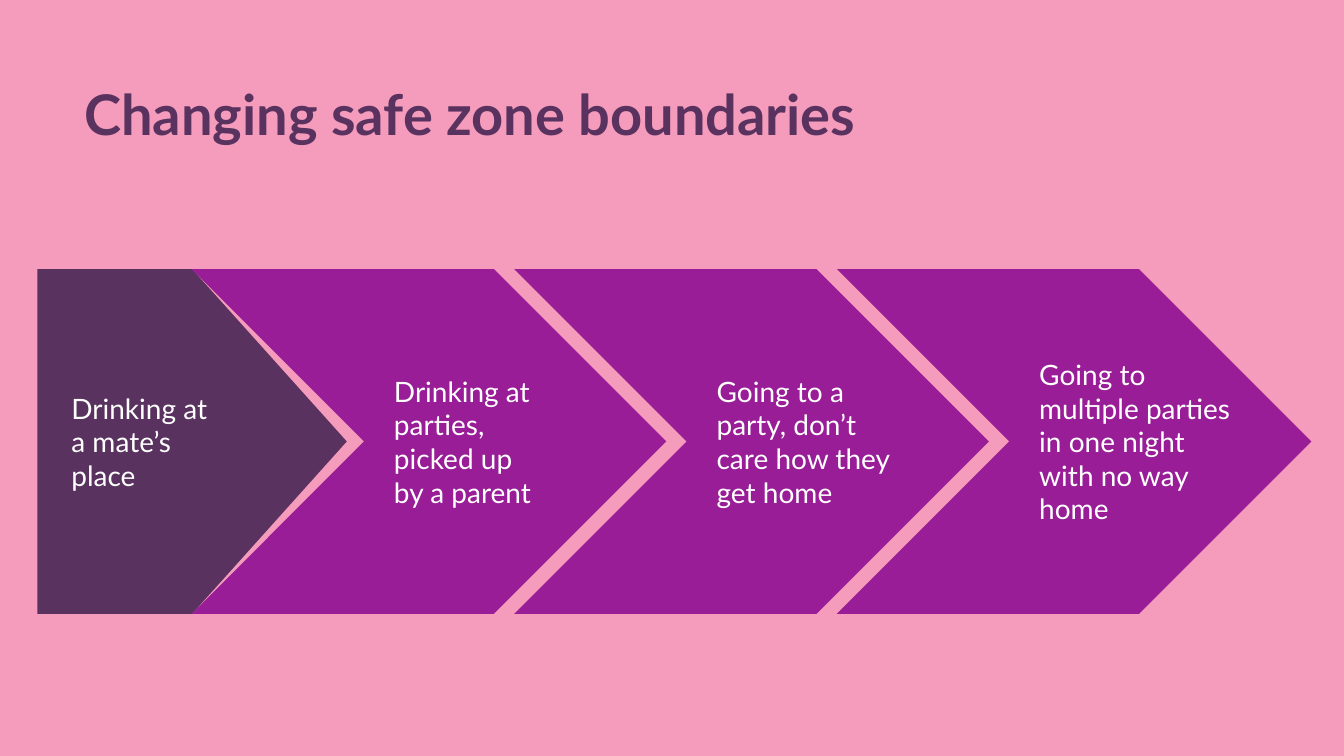
from dataclasses import dataclass

from pptx import Presentation
from pptx import util as u
from pptx.dml.color import RGBColor
from pptx.enum import shapes, text


@dataclass(frozen=True)
class Theme:
    back: str = "F59BBB"
    dark: str = "59325F"
    main: str = "981D97"
    light: str = "FFFFFF"
    font: str = "Lato"
    head: int = 40
    body: int = 20


class Deck:
    """Draws styled elements on the current slide."""

    def __init__(self, theme):
        self.theme = theme
        self.file = Presentation()
        self.file.slide_width = u.Cm(33.87)
        self.file.slide_height = u.Cm(19.05)
        self.slide = self.file.slides.add_slide(self.file.slide_layouts[6])
        self.paint(self.slide.background.fill, theme.back)

    def paint(self, fill, color):
        fill.solid()
        fill.fore_color.rgb = RGBColor.from_string(color)

    def shape(self, kind, box, color):
        item = self.slide.shapes.add_shape(kind, *map(u.Cm, box))
        item.shadow.inherit = False
        self.paint(item.fill, color)
        item.line.fill.background()

    def label(self, words, box, size, color, bold=False, space=1.0,
              anchor=text.MSO_ANCHOR.TOP):
        frame = self.slide.shapes.add_textbox(*map(u.Cm, box)).text_frame
        frame.word_wrap = True
        frame.vertical_anchor = anchor
        para = frame.paragraphs[0]
        para.line_spacing = space
        run = para.add_run()
        run.text = words
        run.font.name = self.theme.font
        run.font.size = u.Pt(size)
        run.font.bold = bold
        run.font.color.rgb = RGBColor.from_string(color)


def main():
    theme = Theme()
    deck = Deck(theme)
    deck.label("Changing safe zone boundaries", (1.88, 2.08, 24.61, 3.96),
               theme.head, theme.dark, bold=True, space=0.9)

    steps = [
        ("Drinking at a mate’s place", 4.27, 3),
        ("Drinking at parties, picked up by a parent", 4.27, 4),
        ("Going to a party, don’t care how they get home", 5.36, 4),
        ("Going to multiple parties in one night with no way home", 5.36, 5),
    ]
    top, high, pitch = 6.78, 8.69, 8.13
    kind = shapes.MSO_SHAPE
    for i, (words, wide, lines) in enumerate(steps):
        if i == 0:
            deck.shape(kind.PENTAGON, (0.94, top, 7.8, high), theme.dark)
        else:
            left = 4.83 + (i - 1) * pitch
            deck.shape(kind.CHEVRON, (left, top, 11.96, high), theme.main)
        tall = 0.27 + 0.85 * lines
        box = (1.55 + i * pitch, top + (high - tall) / 2, wide, tall)
        deck.label(words, box, theme.body, theme.light,
                   anchor=text.MSO_ANCHOR.MIDDLE)

    deck.file.save("out.pptx")


if __name__ == "__main__":
    main()
